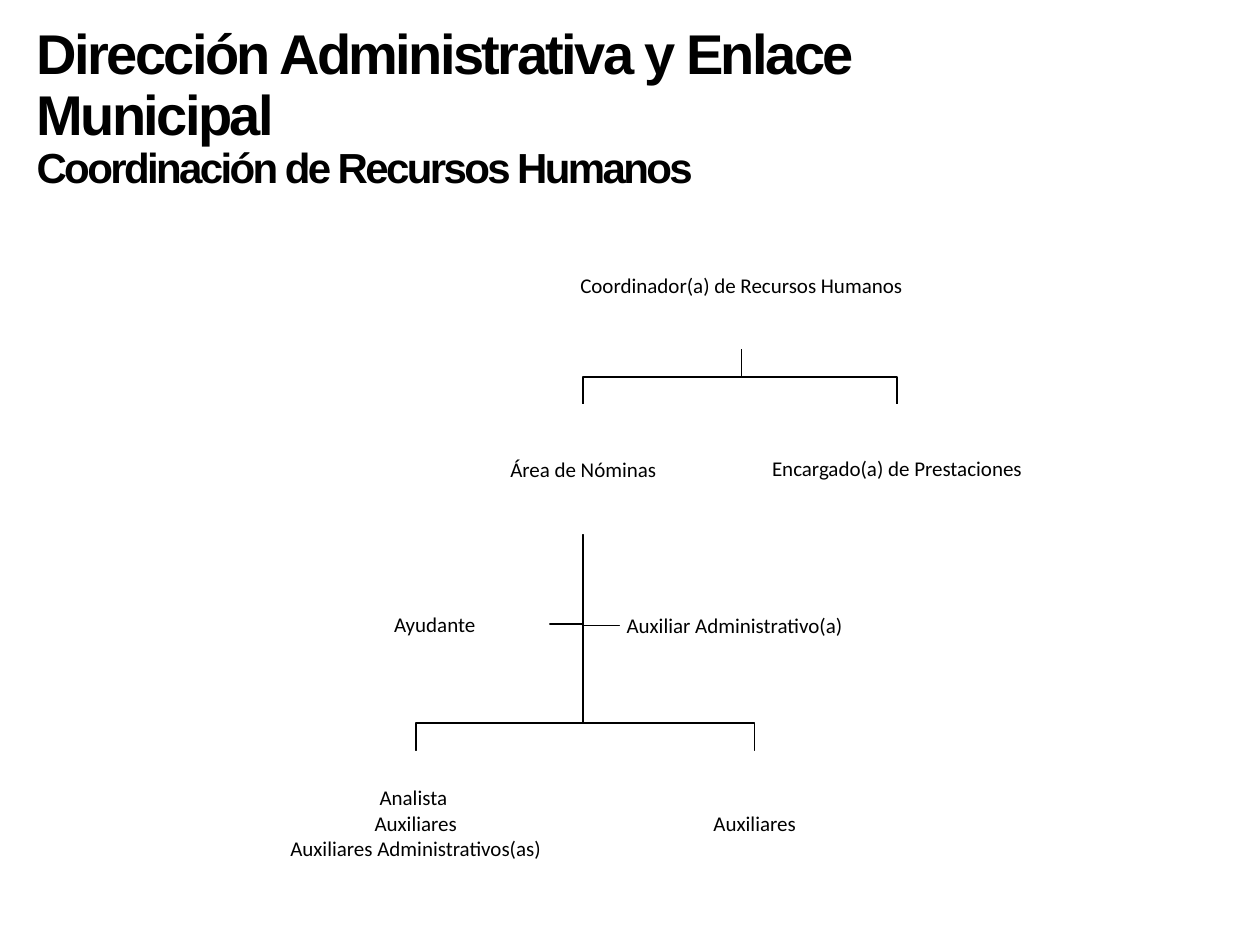
from pptx import Presentation
from pptx.dml.color import RGBColor
from pptx.enum import shapes, text
from pptx.util import Inches, Pt

COLORS = {"ink": "000000", "paper": "FFFFFF"}

# key: left, top, width, height within the chart, lines
BOXES = {
    "head": (2.43, 0, 2.81, 1.01, ["Coordinador(a) de Recursos Humanos"]),
    "area": (1.55, 1.45, 2.06, 1.03, ["Área de Nóminas"]),
    "perks": (4.04, 1.45, 2.06, 1.03, ["Encargado(a) de Prestaciones"]),
    "helper": (0.49, 2.74, 1.82, 0.91, ["Ayudante"]),
    "clerk": (2.87, 2.75, 1.82, 0.91, ["Auxiliar Administrativo(a)"]),
    "staff": (0, 4.2, 2.5, 1.14,
              ["Analista ", "Auxiliares", "Auxiliares Administrativos(as)"]),
    "aides": (2.69, 4.2, 2.5, 1.14, ["Auxiliares"]),
}
BELOW = [("head", "perks"), ("head", "area"), ("area", "aides"), ("area", "staff")]
BESIDE = [("area", "clerk"), ("area", "helper")]
DROP = 0.22  # height of the last bend above a lower box


def color(key):
    return RGBColor.from_string(COLORS[key])


def add_title(slide, left, top, width, height):
    title = slide.shapes.title
    title.left, title.top = Inches(left), Inches(top)
    title.width, title.height = Inches(width), Inches(height)
    frame = title.text_frame
    frame.word_wrap = True
    frame.auto_size = text.MSO_AUTO_SIZE.NONE
    frame.vertical_anchor = text.MSO_ANCHOR.TOP
    frame.text = ("Dirección Administrativa y Enlace Municipal\n"
                  "Coordinación de Recursos Humanos")
    for para, size in zip(frame.paragraphs, (32, 24)):
        para.alignment = text.PP_ALIGN.LEFT
        para.line_spacing = 0.9
        para.space_before = Pt(0)
        font = para.font
        font.name, font.size, font.bold = "Arial", Pt(size), True
        font.color.rgb = color("ink")
        for run in para.runs:
            run._r.get_or_add_rPr().set("spc", "-150")


def add_line(group, points):
    """Draw an open bent line through the points, given in inches."""
    start, *rest = [(Inches(x), Inches(y)) for x, y in points]
    pen = group.shapes.build_freeform(*start)
    pen.add_line_segments(rest, close=False)
    line = pen.convert_to_shape()
    line.shadow.inherit = False
    line.fill.background()
    line.line.color.rgb = color("ink")
    line.line.width = Pt(1)


def add_box(group, left, top, width, height, lines):
    box = group.shapes.add_shape(
        shapes.MSO_SHAPE.RECTANGLE,
        Inches(left), Inches(top), Inches(width), Inches(height))
    box.shadow.inherit = False
    box.fill.solid()
    box.fill.fore_color.rgb = color("paper")
    box.line.fill.background()
    frame = box.text_frame
    frame.word_wrap = True
    frame.vertical_anchor = text.MSO_ANCHOR.MIDDLE
    frame.margin_left = frame.margin_right = Inches(0.01)
    frame.margin_top = frame.margin_bottom = Inches(0.01)
    frame.text = "\n".join(lines)
    for para in frame.paragraphs:
        para.alignment = text.PP_ALIGN.CENTER
        para.font.name, para.font.size = "Calibri", Pt(12)
        para.font.color.rgb = color("ink")
    if lines == BOXES["perks"][-1]:
        frame.paragraphs[0].line_spacing = 0.9
        frame.paragraphs[0].space_after = Pt(4.2)


def add_chart(slide, left, top):
    """Place the organisation chart with its corner at left, top."""
    group = slide.shapes.add_group_shape()
    spots = {key: (left + x, top + y, w, h)
             for key, (x, y, w, h, _) in BOXES.items()}

    def foot(key):
        x, y, w, h = spots[key]
        return x + w / 2, y + h

    for boss, unit in BELOW:
        start = foot(boss)
        x, y, w, _ = spots[unit]
        mid, bend = x + w / 2, y - DROP
        add_line(group, [start, (start[0], bend), (mid, bend), (mid, y)])
    for boss, unit in BESIDE:
        start = foot(boss)
        x, y, w, h = spots[unit]
        side = x if x > start[0] else x + w
        level = y + h / 2
        add_line(group, [start, (start[0], level), (side, level)])
    for key, spot in spots.items():
        add_box(group, *spot, BOXES[key][-1])


def main():
    deck = Presentation()
    deck.slide_width, deck.slide_height = Inches(10), Inches(7.5)
    slide = deck.slides.add_slide(deck.slide_layouts[5])
    slide.background.fill.solid()
    slide.background.fill.fore_color.rgb = color("paper")
    add_title(slide, 0.19, 0.16, 7.46, 1.47)
    add_chart(slide, 2.05, 1.76)
    deck.save("out.pptx")


if __name__ == "__main__":
    main()
